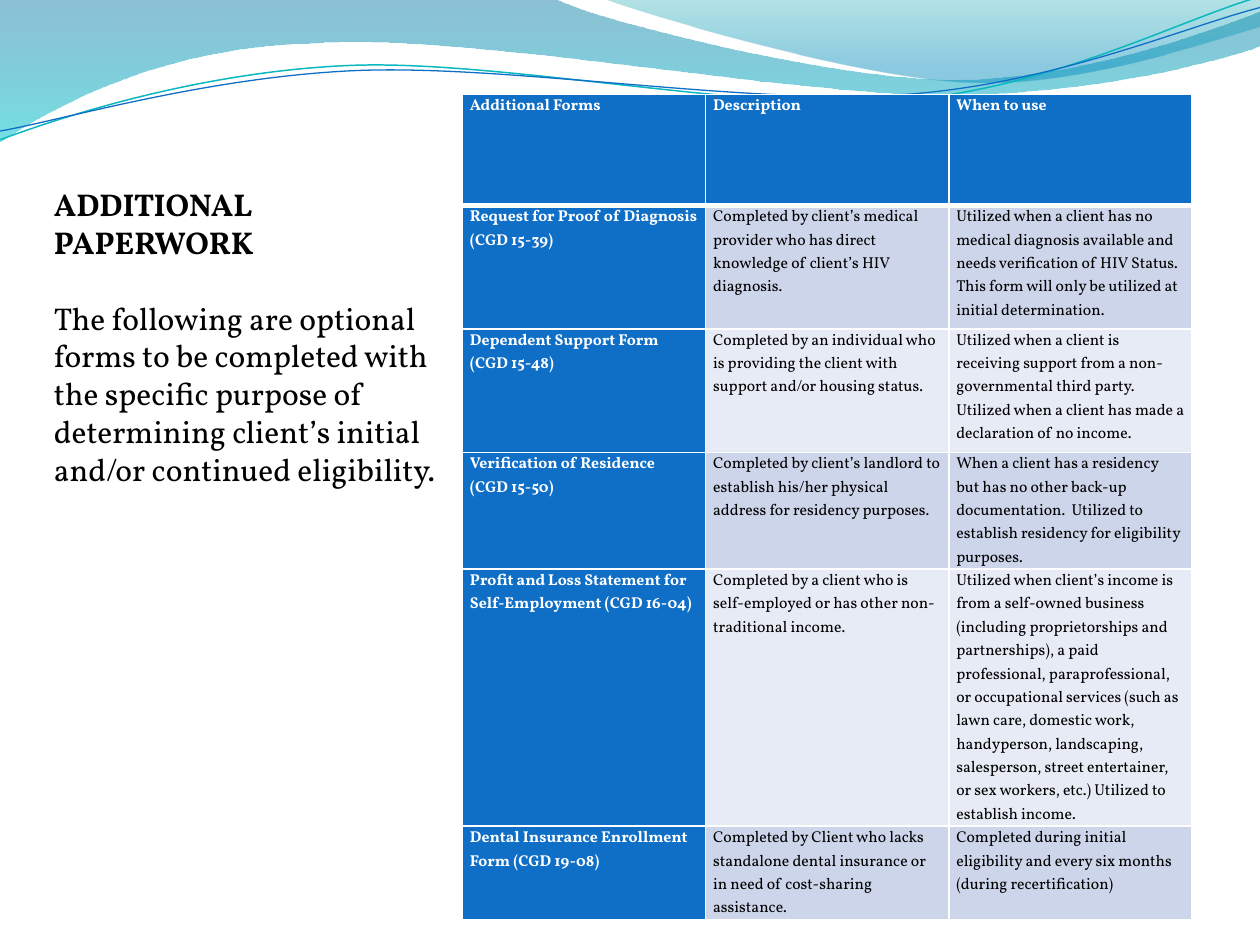
"""Builds a slide listing additional paperwork forms beside a short introduction."""
from math import cos, radians, sin

from lxml import etree
from pptx import Presentation
from pptx.dml.color import RGBColor
from pptx.enum.text import MSO_ANCHOR, PP_ALIGN
from pptx.oxml.ns import qn
from pptx.util import Inches, Pt

LEFT, TOP = PP_ALIGN.LEFT, MSO_ANCHOR.TOP
FONT = "Vollkorn"
BLANK_LAYOUT = 6
COLORS = {
    "white": "FFFFFF", "black": "000000", "blue": "0F6FC6", "teal": "0AB8BF",
    "odd_row": "CCD5EA", "even_row": "E7EBF5",
    "wave_top": "0074A1", "wave_bottom": "00C6CF",
    "crest_top": "00A1A9", "crest_bottom": "008BBF",
}

HEADING = "ADDITIONAL PAPERWORK"
INTRO = ("The following are optional forms to be completed with the specific purpose of "
         "determining client’s initial and/or continued eligibility.")
FORMS = [
    ("Additional Forms", "Description", "When to use"),
    ("Request for Proof of Diagnosis (CGD 15-39)",
     "Completed by client’s medical provider who has direct knowledge of client’s HIV diagnosis.",
     "Utilized when a client has no medical diagnosis available and needs verification of HIV "
     "Status. This form will only be utilized at initial determination."),
    ("Dependent Support Form\n(CGD 15-48)",
     "Completed by an individual who is providing the client with support and/or housing status.",
     "Utilized when a client is receiving support from a non-governmental third party.  "
     "Utilized when a client has made a declaration of no income."),
    ("Verification of Residence\n(CGD 15-50)",
     "Completed by client’s landlord to establish his/her physical address for residency purposes.",
     "When a client has a residency but has no other back-up documentation.  Utilized to "
     "establish residency for eligibility purposes."),
    ("Profit and Loss Statement for Self-Employment (CGD 16-04)",
     "Completed by a client who is self-employed or has other non-traditional income.",
     "Utilized when client’s income is from a self-owned business (including proprietorships "
     "and partnerships), a paid professional, paraprofessional, or occupational services (such "
     "as lawn care, domestic work, handyperson, landscaping, salesperson, street entertainer, "
     "or sex workers, etc.) Utilized to establish income."),
    ("Dental Insurance Enrollment Form (CGD 19-08)",
     "Completed by Client who lacks standalone dental insurance or in need of cost-sharing "
     "assistance.",
     "Completed during initial eligibility and every six months (during recertification)"),
]
ROW_HEIGHTS = [0.88, 0.98, 0.98, 0.82, 1.97, 0.65]
COLUMN_WIDTH = 1.93

# Each outline step holds one point for a line, or three for a Bézier curve.
WAVES = [
    ((0, 0), [
        [(4.4, -0.01)],
        [(4.76, 0.17), (6.64, 0.63), (7.58, 0.63)],
        [(8.53, 0.63), (9.58, 0.26), (10, 0.09)],
        [(10.01, 0.36)],
        [(9.83, 0.44), (8.7, 0.76), (7.46, 0.75)],
        [(6.22, 0.75), (3.82, 0.28), (2.57, 0.34)],
        [(1.29, 0.36), (0.46, 0.83), (-0.01, 1.13)],
        [(0, 0)],
    ], [("wave_top", 0, 45), ("wave_bottom", 1, 55)]),
    ((4.79, -0.01), [
        [(5.09, 0.11), (6.82, 0.62), (7.69, 0.65)],
        [(8.56, 0.69), (9.61, 0.32), (10, 0.21)],
        [(10, 0)],
        [(4.79, -0.01)],
    ], [("crest_top", 0, 30), ("crest_bottom", 0.8, 45)]),
]
RIPPLE_TILT = -2.7
RIPPLE_CENTER = (4.99, 0.58)
RIPPLES = [
    ((0, 1.11), [
        [(0.48, 0.93), (1.58, 0.57), (2.77, 0.52)],
        [(3.95, 0.47), (5.93, 0.89), (7.13, 0.8)],
        [(8.33, 0.71), (9.38, 0.15), (9.98, -0.02)],
    ], "teal", 0.85),
    ((0, 1.04), [
        [(0.47, 0.96), (1.64, 0.61), (2.83, 0.56)],
        [(4.03, 0.51), (5.97, 0.84), (7.17, 0.75)],
        [(8.36, 0.67), (9.41, 0.21), (10, 0.06)],
    ], "blue", 0.75),
]


def rgb(name):
    return RGBColor.from_string(COLORS[name])


def level(point):
    angle = radians(-RIPPLE_TILT)
    dx, dy = (value - middle for value, middle in zip(point, RIPPLE_CENTER))
    return (RIPPLE_CENTER[0] + dx * cos(angle) - dy * sin(angle),
            RIPPLE_CENTER[1] + dx * sin(angle) + dy * cos(angle))


def add_outline(slide, start, steps, close):
    builder = slide.shapes.build_freeform(Inches(start[0]), Inches(start[1]))
    ends = [(Inches(step[-1][0]), Inches(step[-1][1])) for step in steps]
    builder.add_line_segments(ends, close=close)
    shape = builder.convert_to_shape()
    shape.shadow.inherit = False
    segments = list(shape._element.spPr.iter(qn("a:lnTo")))
    for segment, step in zip(segments, steps):
        if len(step) == 3:
            segment.tag = qn("a:cubicBezTo")
            controls = [etree.Element(qn("a:pt"), x=str(Inches(x) - shape.left),
                                      y=str(Inches(y) - shape.top)) for x, y in step[:2]]
            segment[:0] = controls
    return shape


def add_wave(slide, start, steps, stops):
    wave = add_outline(slide, start, steps, True)
    wave.line.fill.background()
    wave.fill.gradient()
    wave.fill.gradient_angle = 270
    for stop, (color, position, _) in zip(wave.fill.gradient_stops, stops):
        stop.color.rgb = rgb(color)
        stop.position = position
    colors = list(wave._element.spPr.iter(qn("a:srgbClr")))
    for node, (_, _, opacity) in zip(colors, stops):
        etree.SubElement(node, qn("a:alpha"), val=str(opacity * 1000))


def add_ripple(slide, start, steps, color, width):
    level_steps = [[level(point) for point in step] for step in steps]
    ripple = add_outline(slide, level(start), level_steps, False)
    ripple.rotation = RIPPLE_TILT
    ripple.fill.background()
    ripple.line.color.rgb = rgb(color)
    ripple.line.width = Pt(width)


def format_paragraph(para, size, color, bold):
    para.alignment = LEFT
    for span in para.runs:
        span.font.name = FONT
        span.font.size = Pt(size)
        span.font.bold = bold
        span.font.color.rgb = rgb(color)


def set_borders(cell, widths):
    properties = cell._tc.get_or_add_tcPr()
    for side, width in widths.items():
        line = etree.SubElement(properties, qn(f"a:ln{side}"), w=str(Pt(width)))
        fill = etree.SubElement(line, qn("a:solidFill"))
        etree.SubElement(fill, qn("a:srgbClr"), val=COLORS["white"])


def format_cell(cell, text, row, column):
    strong = row == 0 or column == 0
    stripe = "odd_row" if row % 2 else "even_row"
    cell.text = text
    cell.margin_left = cell.margin_right = Inches(0.06)
    cell.margin_top = cell.margin_bottom = 0
    cell.vertical_anchor = TOP
    set_borders(cell, {"L": 1, "R": 1, "T": 3 if row == 1 else 1, "B": 3 if row == 0 else 1})
    cell.fill.solid()
    cell.fill.fore_color.rgb = rgb("blue" if strong else stripe)
    for para in cell.text_frame.paragraphs:
        para.line_spacing = 1.07
        format_paragraph(para, 9, "white" if strong else "black", strong)


def add_forms_table(slide):
    columns = len(FORMS[0])
    table = slide.shapes.add_table(
        len(FORMS), columns, Inches(3.67), Inches(0.75),
        Inches(COLUMN_WIDTH * columns), Inches(sum(ROW_HEIGHTS))).table
    for column in table.columns:
        column.width = Inches(COLUMN_WIDTH)
    for row, texts in enumerate(FORMS):
        table.rows[row].height = Inches(ROW_HEIGHTS[row])
        for column, text in enumerate(texts):
            format_cell(table.cell(row, column), text, row, column)


def add_introduction(slide):
    box = slide.shapes.add_textbox(Inches(0.33), Inches(1.42), Inches(3.33), Inches(2.52))
    frame = box.text_frame
    frame.word_wrap = True
    frame.text = f"{HEADING}\n{INTRO}"
    heading, intro = frame.paragraphs
    format_paragraph(heading, 18, "black", True)
    format_paragraph(intro, 18, "black", False)
    intro.space_before = Pt(21.6)


def main():
    deck = Presentation()
    deck.slide_width, deck.slide_height = Inches(10), Inches(7.5)
    slide = deck.slides.add_slide(deck.slide_layouts[BLANK_LAYOUT])
    for wave in WAVES:
        add_wave(slide, *wave)
    for ripple in RIPPLES:
        add_ripple(slide, *ripple)
    add_forms_table(slide)
    add_introduction(slide)
    deck.save("out.pptx")


if __name__ == "__main__":
    main()
